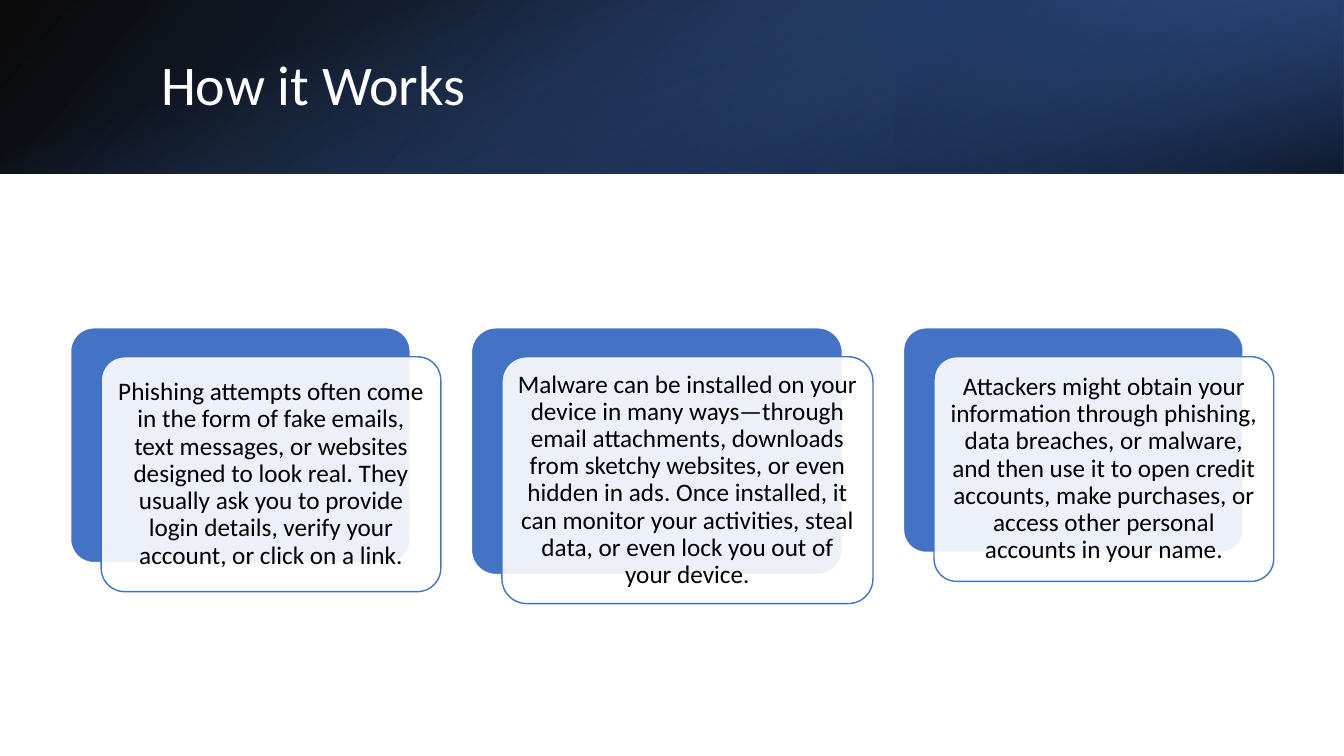
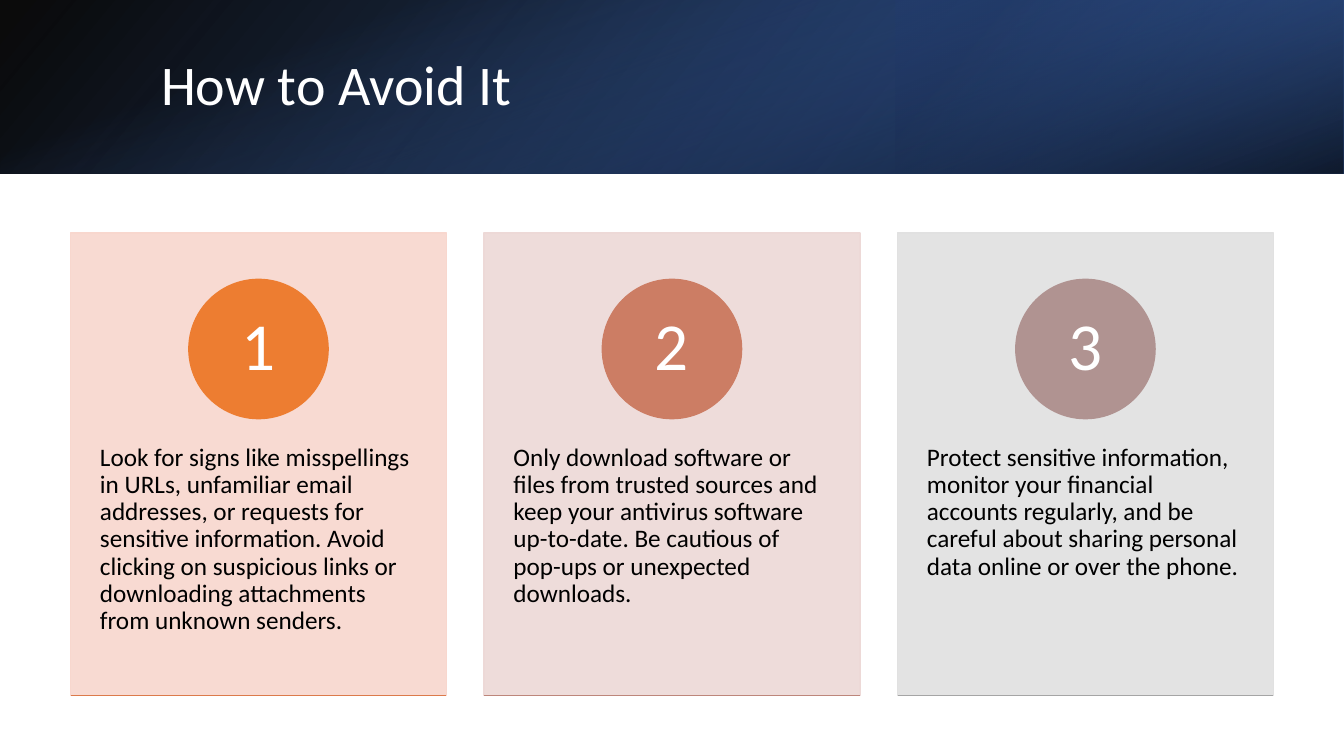
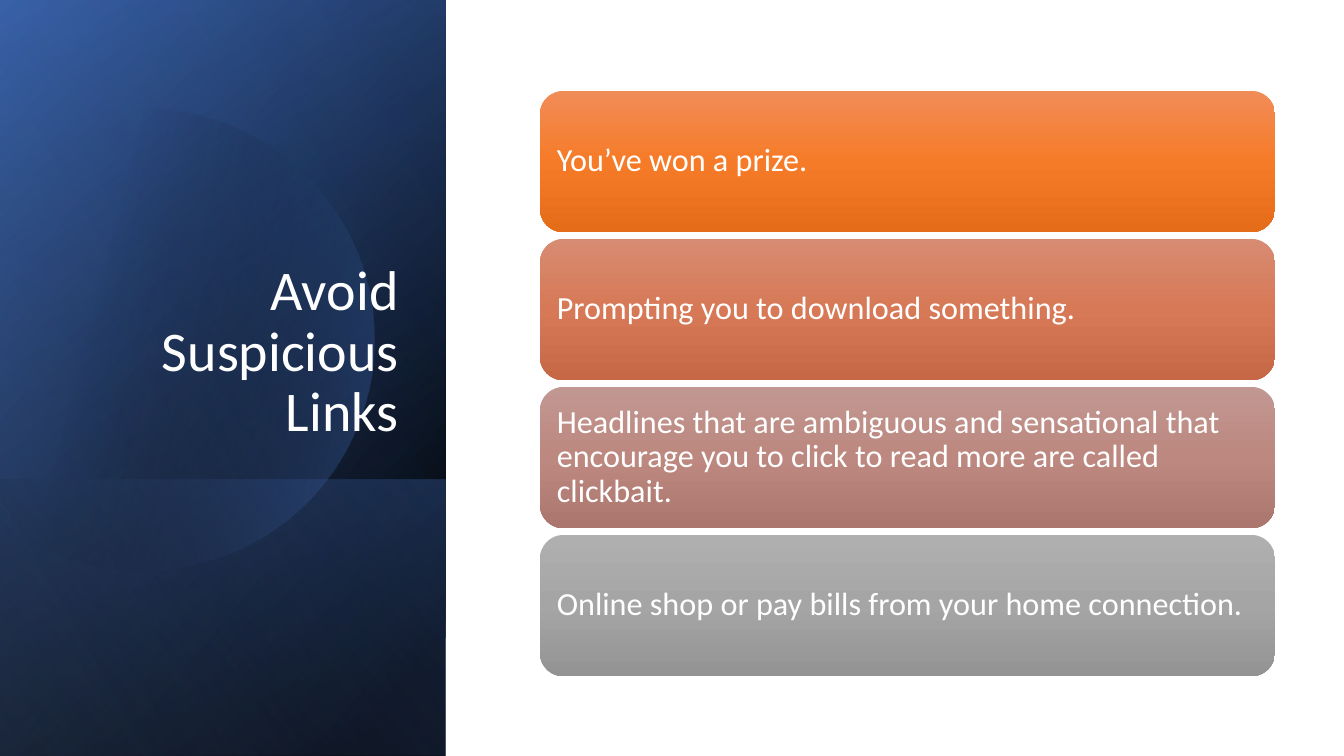
from math import acos, cos, sin

from lxml.etree import SubElement
from pptx import Presentation
from pptx.dml.color import RGBColor
from pptx.enum.shapes import MSO_CONNECTOR, MSO_SHAPE
from pptx.enum.text import MSO_ANCHOR, MSO_AUTO_SIZE, PP_ALIGN
from pptx.oxml import parse_xml
from pptx.oxml.ns import nsdecls, qn
from pptx.util import Cm, Pt

FONT = "Calibri"
WHITE = RGBColor(0xFF, 0xFF, 0xFF)
BLACK = RGBColor(0x00, 0x00, 0x00)
BLUE = RGBColor(0x44, 0x72, 0xC4)
MID_BLUE = RGBColor(0x2F, 0x55, 0x97)
DEEP_BLUE = RGBColor(0x20, 0x38, 0x64)
PALE_BLUE = RGBColor(0x8F, 0xAA, 0xDC)

WIDTH, HEIGHT = 33.87, 19.05
MARGIN = 1.78
BANNER = 4.37
SIDEBAR = 11.23

# Bands: left, top, width, height, turn, flipped, angle, stops (position, colour, opacity)
BANNER_BANDS = [
    (0, 0, WIDTH, BANNER, 0, True, 140, [(0, BLACK, 96), (100, MID_BLUE, 100)]),
    (22.58, 0, 11.29, BANNER, 180, True, 320, [(19, DEEP_BLUE, 68), (100, BLUE, 79)]),
    (0, 0, WIDTH, BANNER, 90, False, 340, [(23, BLUE, 0), (99, BLACK, 74)]),
]
SIDEBAR_BANDS = [
    (0, 0, SIDEBAR, HEIGHT, 90, True, 50, [(8, BLACK, 100), (100, MID_BLUE, 100)]),
    (0, 0, SIDEBAR, HEIGHT, 90, True, 30, [(0, BLACK, 0), (99, BLUE, 46)]),
    (0, 12.09, SIDEBAR, 6.96, 90, True, 130, [(2, BLUE, 29), (100, BLACK, 30)]),
]
SIDEBAR_GLAZE = (0, 0, SIDEBAR, HEIGHT, 90, True, 120, [(0, BLACK, 0), (99, PALE_BLUE, 11)])
DISC_STOPS = [(29, BLACK, 0), (100, BLUE, 43)]

# Width, height, text
WORKINGS = [
    (8.56, 5.92, "Phishing attempts often come in the form of fake emails, text messages, or "
     "websites designed to look real. They usually ask you to provide login details, verify "
     "your account, or click on a link."),
    (9.35, 6.22, "Malware can be installed on your device in many ways—through email "
     "attachments, downloads from sketchy websites, or even hidden in ads. Once installed, it "
     "can monitor your activities, steal data, or even lock you out of your device."),
    (8.56, 5.66, "Attackers might obtain your information through phishing, data breaches, or "
     "malware, and then use it to open credit accounts, make purchases, or access other "
     "personal accounts in your name."),
]

# Panel, circle and base line colours, text
ADVICE = [
    (RGBColor(0xF8, 0xD7, 0xCE), RGBColor(0xED, 0x7D, 0x31), RGBColor(0xDC, 0x7A, 0x4B),
     "Look for signs like misspellings in URLs, unfamiliar email addresses, or requests for "
     "sensitive information. Avoid clicking on suspicious links or downloading attachments "
     "from unknown senders."),
    (RGBColor(0xED, 0xD9, 0xD7), RGBColor(0xCC, 0x7D, 0x64), RGBColor(0xBD, 0x86, 0x7B),
     "Only download software or files from trusted sources and keep your antivirus software "
     "up-to-date. Be cautious of pop-ups or unexpected downloads."),
    (RGBColor(0xE1, 0xE1, 0xE1), RGBColor(0xB0, 0x93, 0x91), RGBColor(0xA5, 0xA5, 0xA5),
     "Protect sensitive information, monitor your financial accounts regularly, and be "
     "careful about sharing personal data online or over the phone."),
]

# Top, middle and bottom colours, text
WARNINGS = [
    ((RGBColor(0xF1, 0x8C, 0x57), RGBColor(0xF6, 0x7B, 0x28), RGBColor(0xE5, 0x6C, 0x19)),
     "You’ve won a prize."),
    ((RGBColor(0xD7, 0x8B, 0x72), RGBColor(0xD7, 0x79, 0x56), RGBColor(0xC6, 0x68, 0x46)),
     "Prompting you to download something."),
    ((RGBColor(0xC1, 0x97, 0x91), RGBColor(0xBC, 0x88, 0x80), RGBColor(0xAA, 0x76, 0x6E)),
     "Headlines that are ambiguous and sensational that encourage you to click to read more "
     "are called clickbait."),
    ((RGBColor(0xAF, 0xAF, 0xAF), RGBColor(0xA5, 0xA5, 0xA5), RGBColor(0x93, 0x93, 0x93)),
     "Online shop or pay bills from your home connection."),
]


def write(shape, words, size=18, color=BLACK, align=PP_ALIGN.LEFT,
          anchor=MSO_ANCHOR.MIDDLE, insets=(0.25, 0.13, 0.25, 0.13)):
    """Fill a shape with one paragraph; insets are left, top, right, bottom in cm."""
    frame = shape.text_frame
    frame.word_wrap = True
    frame.auto_size = MSO_AUTO_SIZE.NONE
    frame.vertical_anchor = anchor
    (frame.margin_left, frame.margin_top,
     frame.margin_right, frame.margin_bottom) = [Cm(inset) for inset in insets]
    para = frame.paragraphs[0]
    para.alignment = align
    para.line_spacing = 0.9
    span = para.add_run()
    span.text = words
    span.font.name = FONT
    span.font.size = Pt(size)
    span.font.color.rgb = color


def add_box(page, kind, left, top, width, height, fill=None, line=None, opacity=100):
    box = page.shapes.add_shape(kind, Cm(left), Cm(top), Cm(width), Cm(height))
    box.shadow.inherit = False
    if fill is not None:
        box.fill.solid()
        box.fill.fore_color.rgb = fill
        if opacity < 100:
            color = box.element.spPr.find(qn("a:solidFill")).find(qn("a:srgbClr"))
            SubElement(color, qn("a:alpha"), val=str(opacity * 1000))
    if line is None:
        box.line.fill.background()
    else:
        box.line.color.rgb = line
        box.line.width = Pt(1)
    return box


def fill_gradient(shape, stops, angle):
    marks = "".join(
        f'<a:gs pos="{position * 1000}"><a:srgbClr val="{color}">'
        f'<a:alpha val="{opacity * 1000}"/></a:srgbClr></a:gs>'
        for position, color, opacity in stops)
    gradient = parse_xml(
        f'<a:gradFill {nsdecls("a")} rotWithShape="1"><a:gsLst>{marks}</a:gsLst>'
        f'<a:lin ang="{angle * 60000}" scaled="0"/></a:gradFill>')
    shape.fill.background()
    properties = shape.element.spPr
    properties.replace(properties.find(qn("a:noFill")), gradient)


def add_band(page, left, top, width, height, turn, flipped, angle, stops):
    """Place a gradient rectangle by the area it covers once it is turned."""
    across, down = (height, width) if turn == 90 else (width, height)
    band = add_box(page, MSO_SHAPE.RECTANGLE, left + (width - across) / 2,
                   top + (height - down) / 2, across, down)
    band.rotation = turn
    if flipped:
        band.element.spPr.find(qn("a:xfrm")).set("flipH", "1")
    fill_gradient(band, stops, angle)


def add_disc(page, center_x=3.61, center_y=8.56, radius=5.82, steps=120):
    """Draw a circle cut off by the left edge of the slide."""
    limit = acos(-center_x / radius)
    angles = [limit * (2 * step / steps - 1) for step in range(steps + 1)]
    points = [(Cm(center_x + radius * cos(angle)), Cm(center_y + radius * sin(angle)))
              for angle in angles]
    builder = page.shapes.build_freeform(*points[0])
    builder.add_line_segments(points[1:], close=True)
    disc = builder.convert_to_shape()
    disc.shadow.inherit = False
    disc.line.fill.background()
    fill_gradient(disc, DISC_STOPS, 14)


def set_title(page, words, left, top, width, height, **style):
    title = page.shapes.title
    title.left, title.top, title.width, title.height = map(Cm, (left, top, width, height))
    title.element.getparent().append(title.element)  # bring in front of the bands
    write(title, words, size=40, color=WHITE, **style)


def add_page(deck):
    return deck.slides.add_slide(deck.slide_layouts[5])


def add_banner_page(deck, title):
    page = add_page(deck)
    for band in BANNER_BANDS:
        add_band(page, *band)
    set_title(page, title, 3.81, 0.97, 27.89, 2.44)
    return page


def build_workings(deck):
    page = add_banner_page(deck, "How it Works")
    left, top, shift_x, shift_y = MARGIN, 8.26, 0.77, 0.73
    for width, height, words in WORKINGS:
        back = add_box(page, MSO_SHAPE.ROUNDED_RECTANGLE, left, top, width, height,
                       fill=BLUE, line=WHITE)
        front = add_box(page, MSO_SHAPE.ROUNDED_RECTANGLE, left + shift_x, top + shift_y,
                        width, height, fill=WHITE, line=BLUE, opacity=90)
        for card in (back, front):
            card.adjustments[0] = 0.1
        write(front, words, align=PP_ALIGN.CENTER, insets=(0.18,) * 4)
        left += width + 2 * shift_x


def build_advice(deck):
    page = add_banner_page(deck, "How to Avoid It")
    top, width, height, circle = 5.87, 9.47, 11.66, 3.51
    pitch = (WIDTH - 2 * MARGIN - width) / (len(ADVICE) - 1)
    for index, (panel_color, circle_color, base_color, words) in enumerate(ADVICE):
        left = MARGIN + index * pitch
        panel = add_box(page, MSO_SHAPE.RECTANGLE, left, top, width, height,
                        fill=panel_color, line=panel_color, opacity=90)
        write(panel, words, anchor=MSO_ANCHOR.TOP, insets=(0.74, 5.33, 0.74, 0.9))
        badge = add_box(page, MSO_SHAPE.OVAL, left + (width - circle) / 2, top + 1.17,
                        circle, circle, fill=circle_color, line=circle_color)
        write(badge, str(index + 1), size=48, color=WHITE, align=PP_ALIGN.CENTER,
              insets=(0.28, 0.03, 0.28, 0.03))
        base = page.shapes.add_connector(MSO_CONNECTOR.STRAIGHT, Cm(left), Cm(top + height),
                                         Cm(left + width), Cm(top + height))
        base.line.color.rgb = base_color
        base.line.width = Pt(1)
        SubElement(base.element.spPr, qn("a:effectLst"))


def build_warnings(deck):
    page = add_page(deck)
    for band in SIDEBAR_BANDS:
        add_band(page, *band)
    add_disc(page)
    add_band(page, *SIDEBAR_GLAZE)
    set_title(page, "Avoid Suspicious Links", 1.63, 4.67, 8.66, 6.65,
              align=PP_ALIGN.RIGHT, anchor=MSO_ANCHOR.BOTTOM)
    left, top, width, height, gap = 13.61, 2.29, 18.52, 3.56, 0.17
    for index, (colors, words) in enumerate(WARNINGS):
        bar = add_box(page, MSO_SHAPE.ROUNDED_RECTANGLE, left, top + index * (height + gap),
                      width, height)
        fill_gradient(bar, [(50 * step, color, 100) for step, color in enumerate(colors)], 90)
        write(bar, words, size=23, color=WHITE, insets=(0.25,) * 4)


def main():
    deck = Presentation()
    deck.slide_width, deck.slide_height = Cm(WIDTH), Cm(HEIGHT)
    build_workings(deck)
    build_advice(deck)
    build_warnings(deck)
    deck.save("out.pptx")


if __name__ == "__main__":
    main()
